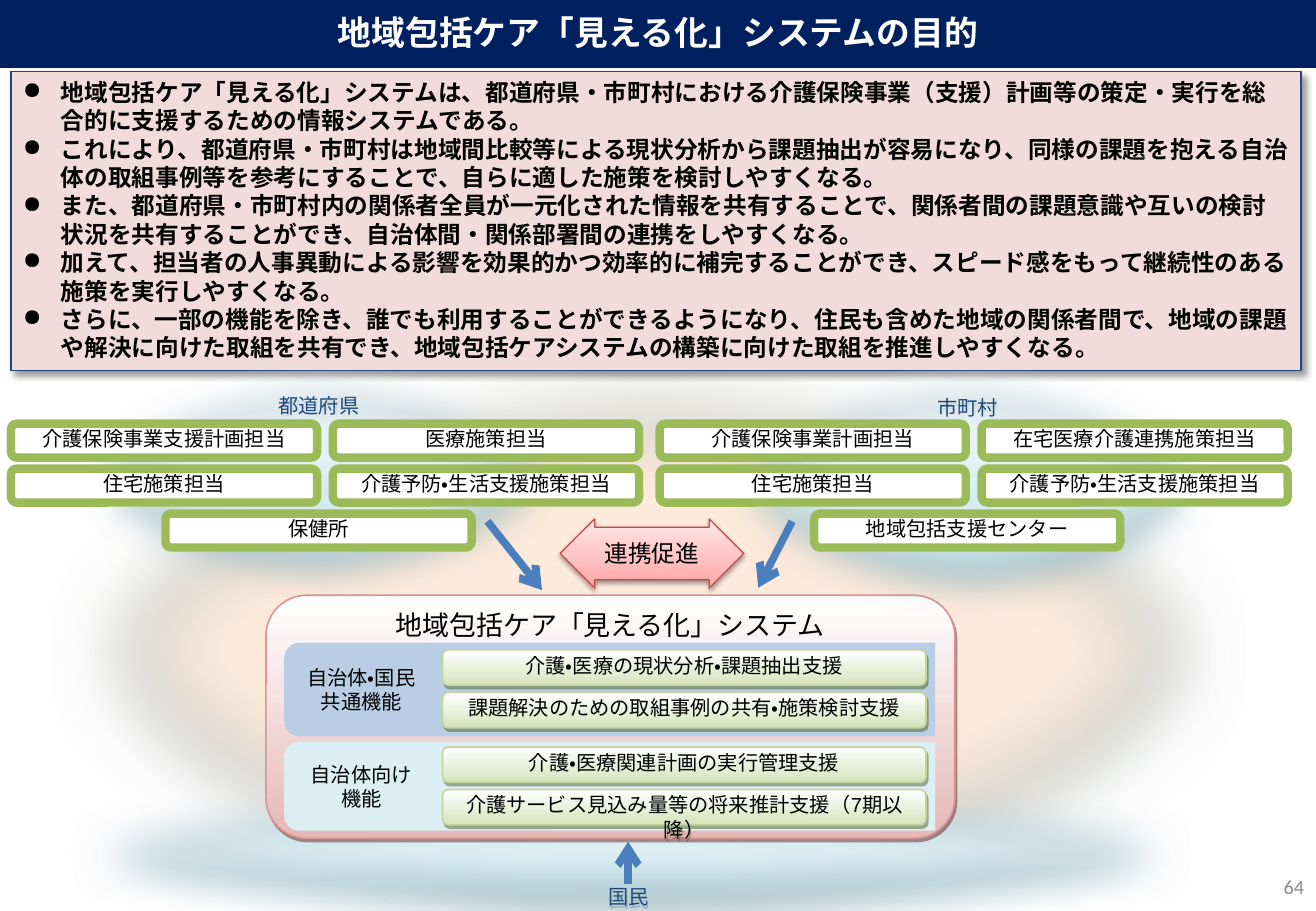
from dataclasses import dataclass
from typing import Optional

from lxml import etree
from pptx import Presentation
from pptx.dml.color import RGBColor
from pptx.enum.shapes import MSO_CONNECTOR, MSO_SHAPE
from pptx.enum.text import MSO_ANCHOR, PP_ALIGN
from pptx.oxml.ns import qn
from pptx.util import Cm, Pt

RECTANGLE, ROUNDED, OVAL = MSO_SHAPE.RECTANGLE, MSO_SHAPE.ROUNDED_RECTANGLE, MSO_SHAPE.OVAL
DOUBLE_ARROW = MSO_SHAPE.LEFT_RIGHT_ARROW
TOP, MIDDLE, BOTTOM = MSO_ANCHOR.TOP, MSO_ANCHOR.MIDDLE, MSO_ANCHOR.BOTTOM
LEFT, CENTER, RIGHT = PP_ALIGN.LEFT, PP_ALIGN.CENTER, PP_ALIGN.RIGHT

BLACK = RGBColor(0x00, 0x00, 0x00)
WHITE = RGBColor(0xFF, 0xFF, 0xFF)
NAVY = RGBColor(0x00, 0x20, 0x60)
BLUE = RGBColor(0x1F, 0x49, 0x7D)
ARROW_BLUE = RGBColor(0x4B, 0x7E, 0xBC)
PEACH = RGBColor(0xFD, 0xEA, 0xDA)
AQUA = RGBColor(0xB6, 0xDD, 0xE8)
AQUA_LINE = RGBColor(0x92, 0xCD, 0xDC)
AQUA_SHADOW = RGBColor(0x20, 0x58, 0x67)
PINK = RGBColor(0xF2, 0xDC, 0xDB)
ROSE = RGBColor(0xE5, 0xB8, 0xB7)
ROSE_LINE = RGBColor(0xD9, 0x95, 0x94)
ROSE_SHADOW = RGBColor(0x62, 0x24, 0x23)
RED_LIGHT = RGBColor(0xFF, 0xE7, 0xE7)
RED_SOFT = RGBColor(0xFF, 0xA6, 0xA5)
RED_LINE = RGBColor(0xBF, 0x4C, 0x48)
GREEN = RGBColor(0xD6, 0xE3, 0xBC)
GREEN_LINE = RGBColor(0xC2, 0xD6, 0x9B)
GREEN_SHADOW = RGBColor(0x4E, 0x61, 0x28)
OFFICE_GREEN = RGBColor(0x9B, 0xBB, 0x59)
SHARED_BLUE = RGBColor(0xB9, 0xCD, 0xE5)
LOCAL_AQUA = RGBColor(0xDB, 0xEE, 0xF4)
GRAY = RGBColor(0x8C, 0x8C, 0x8C)

JAPANESE_FONT = "Noto Sans CJK JP"
LINE_HEIGHT = 1.2


@dataclass(frozen=True)
class Shadow:
    color: RGBColor
    alpha: int = 50
    blur: float = 0
    distance: float = 2.2
    angle: int = 63


@dataclass(frozen=True)
class Look:
    kind: int
    fill: Optional[RGBColor]
    fill_end: Optional[RGBColor] = None
    line: Optional[RGBColor] = None
    line_width: float = 1
    shadow: Optional[Shadow] = None
    soft_edge: float = 0


@dataclass(frozen=True)
class TextStyle:
    size: float = 12
    font: str = "Arial"
    color: RGBColor = BLACK
    bold: bool = False
    align: int = CENTER
    anchor: int = TOP
    inset: tuple[float, float] = (0.2, 0.03)
    bullet: str = ""


@dataclass(frozen=True)
class Government:
    name: str
    left: float
    ellipse_left: float
    ellipse_height: float
    offices: tuple[str, ...]


@dataclass(frozen=True)
class Feature:
    name: str
    color: RGBColor
    top: float
    height: float
    first_button: float
    buttons: tuple[str, ...]


AQUA_OVAL = Look(OVAL, WHITE, AQUA, AQUA_LINE, shadow=Shadow(AQUA_SHADOW), soft_edge=25)
OFFICE = Look(ROUNDED, WHITE, line=OFFICE_GREEN, line_width=5)
BUTTON = Look(ROUNDED, WHITE, GREEN, GREEN_LINE, shadow=Shadow(GREEN_SHADOW))
LABEL = TextStyle()
GROUP_NAME = TextStyle(font=JAPANESE_FONT, color=BLUE)
FEATURE_NAME = TextStyle(font="Calibri", anchor=MIDDLE, inset=(0.25, 0.13))

SUMMARY = """地域包括ケア「見える化」システムは、都道府県・市町村における介護保険事業（支援）計画等の策定・実行を総合的に支援するための情報システムである。
これにより、都道府県・市町村は地域間比較等による現状分析から課題抽出が容易になり、同様の課題を抱える自治体の取組事例等を参考にすることで、自らに適した施策を検討しやすくなる。
また、都道府県・市町村内の関係者全員が一元化された情報を共有することで、関係者間の課題意識や互いの検討状況を共有することができ、自治体間・関係部署間の連携をしやすくなる。
加えて、担当者の人事異動による影響を効果的かつ効率的に補完することができ、スピード感をもって継続性のある施策を実行しやすくなる。
さらに、一部の機能を除き、誰でも利用することができるようになり、住民も含めた地域の関係者間で、地域の課題や解決に向けた取組を共有でき、地域包括ケアシステムの構築に向けた取組を推進しやすくなる。"""

GOVERNMENTS = (
    Government("都道府県", 0.23, 1.17, 5.13, (
        "介護保険事業支援計画担当", "医療施策担当", "住宅施策担当",
        "介護予防・生活支援施策担当", "保健所")),
    Government("市町村", 13.79, 14.73, 5.44, (
        "介護保険事業計画担当", "在宅医療介護連携施策担当", "住宅施策担当",
        "介護予防・生活支援施策担当", "地域包括支援センター")),
)
FEATURES = (
    Feature("自治体・国民\n共通機能", SHARED_BLUE, 13.44, 1.96, 13.59, (
        "介護・医療の現状分析・課題抽出支援", "課題解決のための取組事例の共有・施策検討支援")),
    Feature("自治体向け\n機能", LOCAL_AQUA, 15.52, 1.85, 15.62, (
        "介護・医療関連計画の実行管理支援", "介護サービス見込み量等の将来推計支援（7期以降）")),
)
# x and y of the start, then of the tip
ARROWS = ((10.19, 10.9, 11.33, 12.34), (16.56, 10.9, 15.85, 12.29), (13.13, 18.49, 13.13, 17.6))


def write_text(shape, text: str, style: TextStyle) -> None:
    frame = shape.text_frame
    frame.text = text
    frame.word_wrap = True
    frame.vertical_anchor = style.anchor
    frame.margin_left = frame.margin_right = Cm(style.inset[0])
    frame.margin_top = frame.margin_bottom = Cm(style.inset[1])
    for paragraph in frame.paragraphs:
        paragraph.alignment = style.align
        paragraph.line_spacing = Pt(style.size * LINE_HEIGHT)
        if style.bullet:
            properties = paragraph._p.get_or_add_pPr()
            properties.set("marL", str(Cm(0.79)))
            properties.set("indent", str(Cm(-0.79)))
            etree.SubElement(properties, qn("a:buChar"), char=style.bullet)
        for run in paragraph.runs:
            run.font.size = Pt(style.size)
            run.font.bold = style.bold
            run.font.color.rgb = style.color
            run.font.name = style.font
            properties = run._r.get_or_add_rPr()
            properties.set("lang", "ja-JP")
            if style.font == JAPANESE_FONT:
                etree.SubElement(properties, qn("a:ea"), typeface=style.font)


def add_effects(shape, look: Look) -> None:
    shape.shadow.inherit = False
    effects = shape._element.spPr.find(qn("a:effectLst"))
    if look.shadow:
        shadow = etree.SubElement(
            effects, qn("a:outerShdw"), blurRad=str(Pt(look.shadow.blur)),
            dist=str(Pt(look.shadow.distance)), dir=str(look.shadow.angle * 60000),
            algn="tl", rotWithShape="0")
        color = etree.SubElement(shadow, qn("a:srgbClr"), val=str(look.shadow.color))
        etree.SubElement(color, qn("a:alpha"), val=str(look.shadow.alpha * 1000))
    if look.soft_edge:
        etree.SubElement(effects, qn("a:softEdge"), rad=str(Pt(look.soft_edge)))


def add_box(slide, look: Look, left: float, top: float, width: float, height: float,
            text: str = "", style: TextStyle = LABEL):
    shape = slide.shapes.add_shape(look.kind, Cm(left), Cm(top), Cm(width), Cm(height))
    if look.fill_end:
        shape.fill.gradient()
        shape.fill.gradient_angle = 270
        for stop, color in zip(shape.fill.gradient_stops, (look.fill, look.fill_end)):
            stop.color.rgb = color
        shape.fill.gradient_stops[0].position = 0
        shape.fill.gradient_stops[1].position = 1
    else:
        shape.fill.solid()
        shape.fill.fore_color.rgb = look.fill
    if look.line:
        shape.line.color.rgb = look.line
        shape.line.width = Pt(look.line_width)
    else:
        shape.line.fill.background()
    add_effects(shape, look)
    if text:
        write_text(shape, text, style)
    return shape


def add_arrow(slide, *ends: float) -> None:
    connector = slide.shapes.add_connector(MSO_CONNECTOR.STRAIGHT, *map(Cm, ends))
    connector.line.color.rgb = ARROW_BLUE
    connector.line.width = Pt(4.5)
    etree.SubElement(connector.line._get_or_add_ln(), qn("a:tailEnd"), type="arrow")
    etree.SubElement(connector._element.spPr, qn("a:effectLst"))


def add_government(slide, group: Government) -> None:
    add_box(slide, AQUA_OVAL, group.ellipse_left, 7.44, 11, group.ellipse_height,
            group.name, GROUP_NAME)
    for index, office in enumerate(group.offices):
        row, column = divmod(index, 2)
        offset = 3.23 if row == 2 else column * 6.73
        add_box(slide, OFFICE, group.left + offset, 8.86 + row * 0.94, 6.4, 0.71, office)


def add_feature(slide, feature: Feature) -> None:
    add_box(slide, Look(RECTANGLE, feature.color), 8.86, feature.top, 10.69, feature.height)
    add_box(slide, Look(ROUNDED, feature.color), 5.94, feature.top, 3.23, feature.height,
            feature.name, FEATURE_NAME)
    for index, button in enumerate(feature.buttons):
        add_box(slide, BUTTON, 9.25, feature.first_button + index * 0.89, 10.11, 0.74, button)


def main() -> None:
    presentation = Presentation()
    presentation.slide_width, presentation.slide_height = Cm(27.51), Cm(19.05)
    slide = presentation.slides.add_slide(presentation.slide_layouts[6])

    # Soft background
    add_box(slide, Look(OVAL, PEACH, line=AQUA_LINE, shadow=Shadow(AQUA_SHADOW), soft_edge=50),
            0.38, 6.93, 26.34, 13.34)
    add_box(slide, AQUA_OVAL, -0.3, 16.03, 26.87, 3.51, "国民",
            TextStyle(font=JAPANESE_FONT, color=BLUE, anchor=BOTTOM))

    # Title and summary
    add_box(slide, Look(RECTANGLE, NAVY), 0, -0.08, 27.51, 1.5,
            "地域包括ケア「見える化」システムの目的",
            TextStyle(20, JAPANESE_FONT, WHITE, True, anchor=MIDDLE))
    add_box(slide, Look(RECTANGLE, PINK, line=BLUE, line_width=0.75,
                        shadow=Shadow(BLACK, 40, 4, 3, 45)),
            0.23, 1.5, 26.97, 6.25, SUMMARY,
            TextStyle(14, JAPANESE_FONT, bold=True, align=LEFT, inset=(0.25, 0.13), bullet="●"))

    # System with its features
    add_box(slide, Look(ROUNDED, WHITE, ROSE, ROSE_LINE, shadow=Shadow(ROSE_SHADOW)),
            5.56, 12.45, 14.4, 5.08, "地域包括ケア「見える化」システム", TextStyle(16))
    for feature in FEATURES:
        add_feature(slide, feature)

    # Governments and their offices
    for group in GOVERNMENTS:
        add_government(slide, group)

    # Arrows
    for ends in ARROWS:
        add_arrow(slide, *ends)
    cooperation = add_box(
        slide, Look(DOUBLE_ARROW, RED_LIGHT, RED_SOFT, RED_LINE, 0.75,
                    Shadow(BLACK, 38, 3.1, 1.6, 90)),
        11.71, 10.85, 3.84, 1.45, "連携促進", TextStyle(14, "Calibri", anchor=MIDDLE))
    cooperation.adjustments[0] = 0.76

    # Page number
    page_number = slide.shapes.add_textbox(Cm(21.11), Cm(18.03), Cm(6.4), Cm(1.02))
    write_text(page_number, "64", TextStyle(12, "Calibri", GRAY, align=RIGHT, anchor=MIDDLE,
                                            inset=(0.25, 0.13)))
    presentation.save("out.pptx")


if __name__ == "__main__":
    main()
